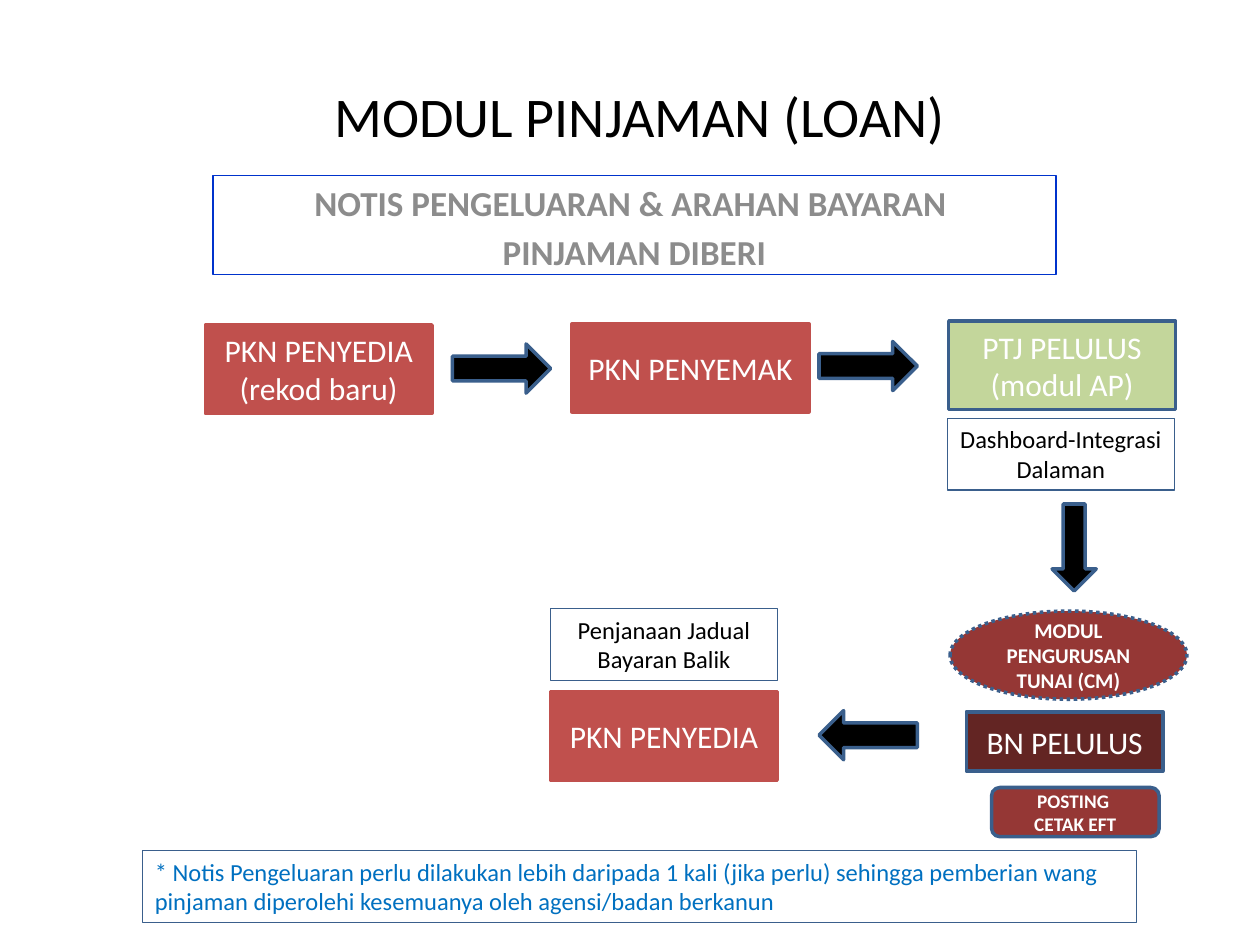
from pptx import Presentation
from pptx.dml.color import RGBColor
from pptx.enum.dml import MSO_LINE
from pptx.enum.shapes import MSO_SHAPE
from pptx.enum.text import MSO_ANCHOR, PP_ALIGN
from pptx.util import Inches, Pt

RECT, OVAL, ROUNDED = MSO_SHAPE.RECTANGLE, MSO_SHAPE.OVAL, MSO_SHAPE.ROUNDED_RECTANGLE
ARROW = MSO_SHAPE.RIGHT_ARROW
TOP, MIDDLE = MSO_ANCHOR.TOP, MSO_ANCHOR.MIDDLE
LEFT, CENTER = PP_ALIGN.LEFT, PP_ALIGN.CENTER
DOTTED = MSO_LINE.ROUND_DOT

FONT = "Calibri"
BLACK, WHITE, GREY, BLUE = "000000", "FFFFFF", "8C8C8C", "0070C0"
EDGE, HEADING_EDGE = "3A5F8C", "0033CC"
RED, GREEN, BRICK, MAROON = "C0504D", "C3D69B", "953735", "632523"

TITLE = ("MODUL PINJAMAN (LOAN)", (1.93, 0.6, 6.3, 0.64))
HEADING = ("NOTIS PENGELUARAN & ARAHAN BAYARAN \nPINJAMAN DIBERI", (1.69, 1.39, 6.69, 0.79))

STEPS = [
    ("PKN PENYEDIA\n(rekod baru)", (1.63, 2.58, 1.8, 0.7), RECT, RED, RED, 18, False),
    ("PKN PENYEMAK", (4.54, 2.57, 1.88, 0.7), RECT, RED, RED, 18, False),
    ("PTJ PELULUS\n(modul AP)", (7.53, 2.55, 1.8, 0.7), RECT, GREEN, EDGE, 18, False),
    ("PKN PENYEDIA", (4.37, 5.49, 1.8, 0.7), RECT, RED, RED, 18, False),
    ("MODUL PENGURUSAN TUNAI (CM)", (7.54, 4.85, 1.88, 0.7), OVAL, BRICK, EDGE, 12, True),
    ("BN PELULUS", (7.67, 5.65, 1.56, 0.47), RECT, MAROON, EDGE, 18, False),
    ("POSTING \nCETAK EFT", (7.87, 6.25, 1.33, 0.39), ROUNDED, BRICK, EDGE, 11, True),
]
ARROWS = [
    ((3.59, 2.73, 0.78, 0.39), 0),
    ((6.5, 2.71, 0.78, 0.39), 0),
    ((8.18, 4.17, 0.69, 0.35), 90),
    ((6.5, 5.64, 0.78, 0.39), 180),
]
NOTES = [
    ("Dashboard-Integrasi Dalaman", (7.52, 3.32, 1.8, 0.57), BLACK, CENTER),
    ("Penjanaan Jadual Bayaran Balik", (4.37, 4.83, 1.8, 0.57), BLACK, CENTER),
    ("* Notis Pengeluaran perlu dilakukan lebih daripada 1 kali (jika perlu) sehingga "
     "pemberian wang pinjaman diperolehi kesemuanya oleh agensi/badan berkanun",
     (1.13, 6.75, 7.89, 0.57), BLUE, LEFT),
]


def rgb(color):
    return RGBColor.from_string(color)


def write(shape, text, size, color, bold=False, align=CENTER, anchor=TOP, before=0):
    frame = shape.text_frame
    frame.word_wrap = True
    frame.vertical_anchor = anchor
    frame.text = text
    for paragraph in frame.paragraphs:
        paragraph.alignment = align
        paragraph.space_before = Pt(before)
        for run in paragraph.runs:
            run.font.name = FONT
            run.font.size = Pt(size)
            run.font.bold = bold
            run.font.color.rgb = rgb(color)


def add_figure(slide, kind, box, fill, edge, weight):
    figure = slide.shapes.add_shape(kind, *map(Inches, box))
    figure.shadow.inherit = False
    if fill:
        figure.fill.solid()
        figure.fill.fore_color.rgb = rgb(fill)
    else:
        figure.fill.background()
    figure.line.color.rgb = rgb(edge)
    figure.line.width = Pt(weight)
    return figure


def main():
    deck = Presentation()
    deck.slide_width, deck.slide_height = Inches(10), Inches(7.5)
    slide = deck.slides.add_slide(deck.slide_layouts[6])

    text, box = TITLE
    write(slide.shapes.add_textbox(*map(Inches, box)), text, 32, BLACK)

    text, box = HEADING
    heading = add_figure(slide, RECT, box, None, HEADING_EDGE, 0.75)
    write(heading, text, 20, GREY, bold=True, before=4)

    for text, box, kind, fill, edge, size, bold in STEPS:
        step = add_figure(slide, kind, box, fill, edge, 2)
        if kind == OVAL:
            step.line.dash_style = DOTTED
        write(step, text, size, WHITE, bold, anchor=MIDDLE)

    for box, angle in ARROWS:
        add_figure(slide, ARROW, box, BLACK, EDGE, 2).rotation = angle

    for text, box, color, align in NOTES:
        write(add_figure(slide, RECT, box, None, EDGE, 0.75), text, 14, color, align=align)

    deck.save("out.pptx")


if __name__ == "__main__":
    main()
